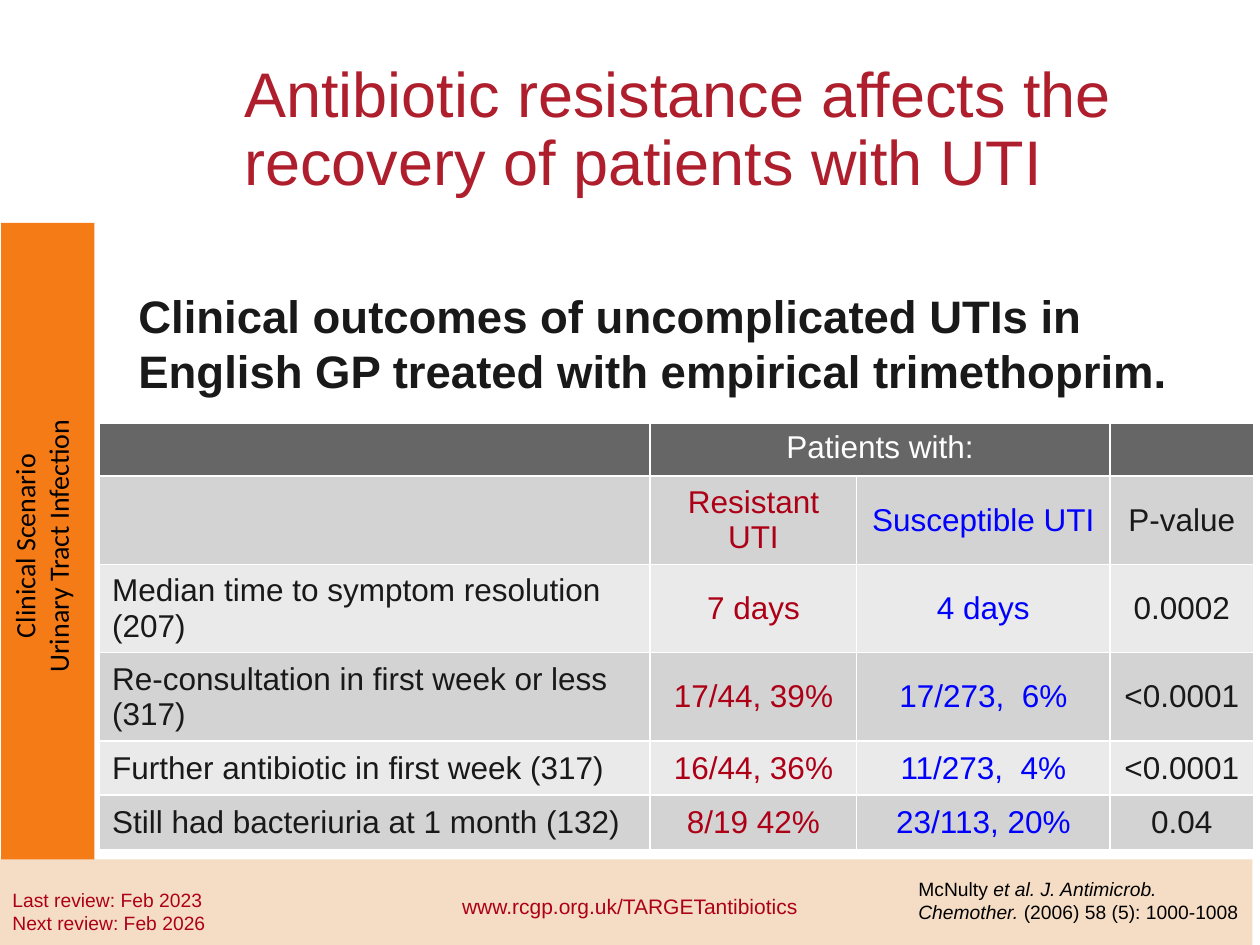
from lxml import etree
from pptx import Presentation
from pptx.dml.color import RGBColor
from pptx.enum.shapes import MSO_SHAPE
from pptx.enum.text import MSO_ANCHOR, PP_ALIGN
from pptx.oxml.ns import qn
from pptx.util import Inches, Pt

RECTANGLE = MSO_SHAPE.RECTANGLE
TOP, MIDDLE, BOTTOM = MSO_ANCHOR.TOP, MSO_ANCHOR.MIDDLE, MSO_ANCHOR.BOTTOM
LEFT, CENTER = PP_ALIGN.LEFT, PP_ALIGN.CENTER

COLORS = {
    "title": "AF1E2C", "orange": "F57B17", "footer": "F4DDC4",
    "ink": "191919", "black": "000000", "white": "FFFFFF",
    "red": "AD0016", "blue": "0000FF",
    "header": "666666", "band_dark": "D3D3D3", "band_light": "EAEAEA",
}

OUTCOMES = [
    ["", "Resistant UTI", "Susceptible UTI", "P-value"],
    ["Median time to symptom resolution (207)", "7 days", "4 days", "0.0002"],
    ["Re-consultation in first week or less (317)", "17/44, 39%", "17/273,  6%", "<0.0001"],
    ["Further antibiotic in first week (317)", "16/44, 36%", "11/273,  4%", "<0.0001"],
    ["Still had bacteriuria at 1 month (132)", "8/19 42%", "23/113, 20%", "0.04"],
]
COLUMN_WIDTHS = [4.37, 1.64, 2.01, 1.14]
ROW_HEIGHTS = [0.42, 0.7, 0.7, 0.7, 0.43, 0.43]
COLUMN_COLORS = ["ink", "red", "blue", "ink"]


def rgb(name):
    return RGBColor.from_string(COLORS[name])


def write(frame, paragraphs, size=18, color="ink", font="Arial", bold=False,
          align=LEFT, anchor=TOP, spacing=None):
    """Each paragraph is a string or a list of (text, italic) runs."""
    frame.word_wrap = True
    frame.vertical_anchor = anchor
    for index, content in enumerate(paragraphs):
        paragraph = frame.paragraphs[0] if index == 0 else frame.add_paragraph()
        paragraph.alignment = align
        if spacing:
            paragraph.line_spacing = spacing
        runs = [(content, False)] if isinstance(content, str) else content
        for text, italic in runs:
            run = paragraph.add_run()
            run.text = text
            run.font.name, run.font.size = font, Pt(size)
            run.font.bold, run.font.italic = bold, italic
            run.font.color.rgb = rgb(color)


def add_label(slide, box, paragraphs, **text_format):
    label = slide.shapes.add_textbox(*map(Inches, box))
    write(label.text_frame, paragraphs, **text_format)


def add_panel(slide, box, color):
    panel = slide.shapes.add_shape(RECTANGLE, *map(Inches, box))
    panel.shadow.inherit = False
    panel.fill.solid()
    panel.fill.fore_color.rgb = rgb(color)
    panel.line.fill.background()
    return panel


def add_sidebar(slide, box):
    frame = add_panel(slide, box, "orange").text_frame
    write(frame, ["Clinical Scenario", "Urinary Tract Infection"], size=16,
          color="black", font="Calibri", align=CENTER, anchor=TOP)
    frame._txBody.bodyPr.set("vert", "vert270")


def style_cell(cell, fill):
    cell.fill.solid()
    cell.fill.fore_color.rgb = rgb(fill)
    # Borders have to stand before the fill
    properties = cell._tc.get_or_add_tcPr()
    for position, side in enumerate(("lnL", "lnR", "lnT", "lnB")):
        border = etree.Element(qn(f"a:{side}"), w=str(Pt(1)))
        solid = etree.SubElement(border, qn("a:solidFill"))
        etree.SubElement(solid, qn("a:srgbClr"), val=COLORS["white"])
        properties.insert(position, border)


def add_outcomes_table(slide, box):
    table = slide.shapes.add_table(
        len(ROW_HEIGHTS), len(COLUMN_WIDTHS), *map(Inches, box)).table
    table.horz_banding = False
    for column, width in zip(table.columns, COLUMN_WIDTHS):
        column.width = Inches(width)
    for row, height in zip(table.rows, ROW_HEIGHTS):
        row.height = Inches(height)

    # Header row, with one heading over both patient groups
    for cell in table.rows[0].cells:
        style_cell(cell, "header")
    table.cell(0, 1).merge(table.cell(0, 2))
    write(table.cell(0, 1).text_frame, ["Patients with:"], color="white", align=CENTER)

    # Outcome rows in alternating bands
    for r, values in enumerate(OUTCOMES, start=1):
        for c, value in enumerate(values):
            cell = table.cell(r, c)
            style_cell(cell, "band_dark" if r % 2 else "band_light")
            cell.vertical_anchor = MIDDLE
            if value:
                write(cell.text_frame, [value], color=COLUMN_COLORS[c],
                      align=CENTER if c else LEFT, anchor=MIDDLE)


def add_footer(slide, box):
    left, top, width, height = box
    add_panel(slide, box, "footer")
    review = add_panel(slide, (left + 0.06, top + 0.18, 3.34, 0.47), "footer")
    write(review.text_frame, ["Last review: Feb 2023", "Next review: Feb 2026"],
          size=11, color="red", anchor=MIDDLE)
    add_label(slide, (left + 3.39, top + 0.22, 3.34, 0.3),
              ["www.rcgp.org.uk/TARGETantibiotics"],
              size=12, color="red", align=CENTER)
    # Citation, ending inside the right edge of the footer
    citation = [("McNulty ", False), ("et al. J. Antimicrob. Chemother.", True),
                (" (2006) 58 (5): 1000-1008", False)]
    add_label(slide, (left + 7.25, top + 0.09, width - 7.2, 0.47), [citation],
              size=11, color="black")


def main():
    presentation = Presentation()
    presentation.slide_width, presentation.slide_height = Inches(10), Inches(7.5)
    slide = presentation.slides.add_slide(presentation.slide_layouts[6])

    add_label(slide, (1.84, 0.76, 7.95, 0.87),
              ["Antibiotic resistance affects the recovery of patients with UTI"],
              size=36, color="title", anchor=BOTTOM, spacing=0.9)
    add_sidebar(slide, (0.01, 1.77, 0.74, 5.13))
    add_label(slide, (1, 2.24, 8.79, 0.98),
              ["Clinical outcomes of uncomplicated UTIs in English GP "
               "treated with empirical trimethoprim."], size=26, bold=True)
    add_outcomes_table(slide, (0.79, 3.36, 9.15, 3.38))
    add_footer(slide, (-0.06, 6.82, 10, 0.71))
    presentation.save("out.pptx")


if __name__ == "__main__":
    main()
